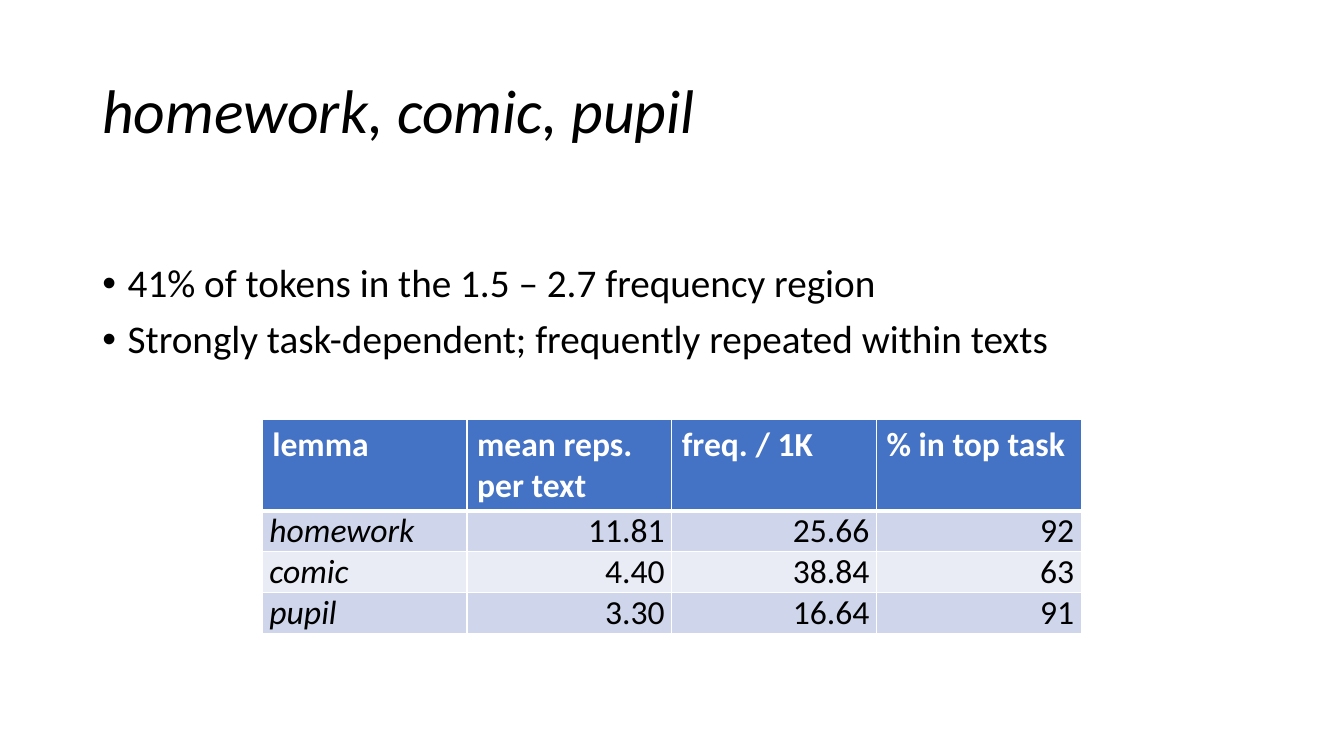
from lxml.etree import SubElement
from pptx import Presentation
from pptx.dml.color import RGBColor as Rgb
from pptx.enum.text import MSO_ANCHOR as Anchor, PP_ALIGN as Align
from pptx.oxml.ns import qn
from pptx.util import Cm, Pt

COLORS = {
    "text": "000000",
    "white": "FFFFFF",
    "header": "4472C4",
    "odd_row": "CFD5EA",
    "even_row": "E9EBF5",
}


class SlideBuilder:
    font = "Calibri"
    left, width = 2.33, 29.21

    def __init__(self, slide):
        self.slide = slide

    def style(self, para, size, color="text", bold=False, italic=False):
        for span in para.runs:
            span.font.name = self.font
            span.font.size = Pt(size)
            span.font.bold = bold
            span.font.italic = italic
            span.font.color.rgb = Rgb.from_string(COLORS[color])

    def text_box(self, top, height, anchor):
        box = self.slide.shapes.add_textbox(
            Cm(self.left), Cm(top), Cm(self.width), Cm(height))
        frame = box.text_frame
        frame.word_wrap = True
        frame.vertical_anchor = anchor
        return frame

    def title(self, text, top, height):
        frame = self.text_box(top, height, Anchor.MIDDLE)
        frame.text = text
        para = frame.paragraphs[0]
        para.line_spacing = 0.9
        self.style(para, 44, italic=True)

    def bullets(self, lines, top, height):
        frame = self.text_box(top, height, Anchor.TOP)
        frame.text = "\n".join(lines)
        for para in frame.paragraphs:
            para.line_spacing = 0.9
            para.space_before = Pt(10)
            self.style(para, 28)
            props = para._p.get_or_add_pPr()
            props.set("marL", str(Cm(0.64)))
            props.set("indent", str(-Cm(0.64)))
            SubElement(props, qn("a:buFont"), typeface="Arial")
            SubElement(props, qn("a:buChar"), char="•")

    def borders(self, cell, **widths):
        props = cell._tc.get_or_add_tcPr()
        for position, (side, width) in enumerate(widths.items()):
            line = SubElement(props, qn(f"a:{side}"), w=str(Pt(width)))
            fill = SubElement(line, qn("a:solidFill"))
            SubElement(fill, qn("a:srgbClr"), val=COLORS["white"])
            props.insert(position, line)

    def table(self, rows, left, top, column_width, heights):
        columns = len(rows[0])
        table = self.slide.shapes.add_table(
            len(rows), columns, Cm(left), Cm(top),
            Cm(column_width * columns), Cm(sum(heights))).table
        for column in table.columns:
            column.width = Cm(column_width)
        for row, (values, height) in enumerate(zip(rows, heights)):
            table.rows[row].height = Cm(height)
            for column, value in enumerate(values):
                self.cell(table.cell(row, column), value, row, column)

    def cell(self, cell, value, row, column):
        header = row == 0
        cell.text = value
        para = cell.text_frame.paragraphs[0]
        if header:
            color = "header"
            self.style(para, 24, "white", bold=True)
        else:
            color = "odd_row" if row % 2 else "even_row"
            cell.margin_left = cell.margin_right = Cm(0.18)
            cell.margin_top = cell.margin_bottom = 0
            para.alignment = Align.RIGHT if column else Align.LEFT
            self.style(para, 24, italic=column == 0)
        cell.fill.solid()
        cell.fill.fore_color.rgb = Rgb.from_string(COLORS[color])
        self.borders(cell, lnL=1, lnR=1, lnT=3 if row == 1 else 1,
                     lnB=3 if header else 1)


def main():
    deck = Presentation()
    deck.slide_width, deck.slide_height = Cm(33.87), Cm(19.05)
    page = SlideBuilder(deck.slides.add_slide(deck.slide_layouts[6]))

    page.title("homework, comic, pupil", top=1.01, height=3.68)
    page.bullets([
        "41% of tokens in the 1.5 – 2.7 frequency region",
        "Strongly task-dependent; frequently repeated within texts",
    ], top=6.52, height=10.64)
    page.table([
        ["lemma", "mean reps. per text", "freq. / 1K", "% in top task"],
        ["homework", "11.81", "25.66", "92"],
        ["comic", "4.40", "38.84", "63"],
        ["pupil", "3.30", "16.64", "91"],
    ], left=6.61, top=10.57, column_width=5.16,
        heights=[2.3, 1.03, 1.03, 1.03])

    deck.save("out.pptx")


if __name__ == "__main__":
    main()
